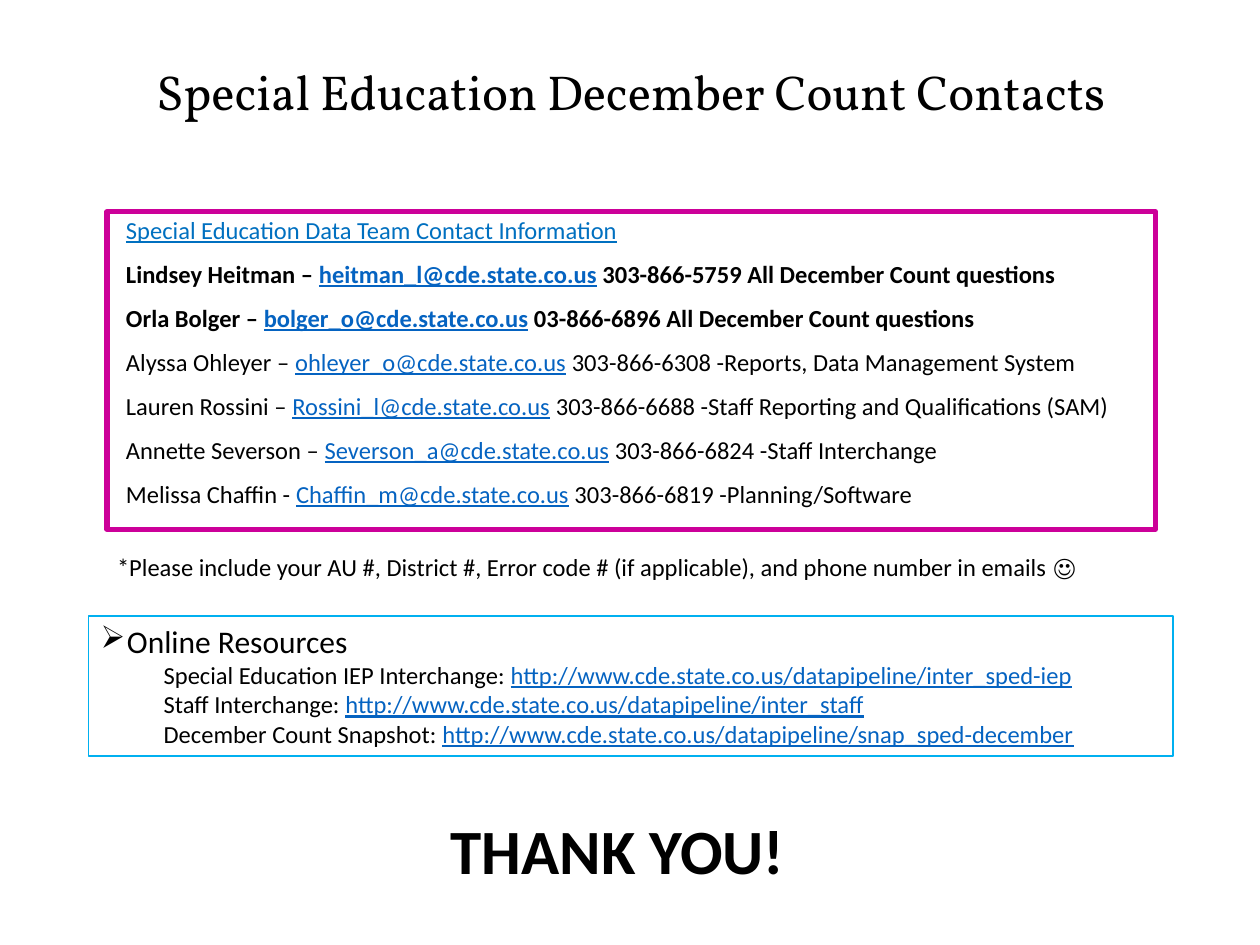
from pptx import Presentation
from pptx import util as u
from pptx.dml import color
from pptx.enum import shapes, text
from pptx.oxml import parse_xml
from pptx.oxml.ns import nsdecls

COLORS = {"ink": "000000", "link": "0563C1", "heading": "0070C0",
          "paper": "FFFFFF", "contact_border": "CC0099", "resource_border": "00B0F0"}
BODY_FONT = "Calibri"
SMALL_INDENT = 0.13

CONTACTS = [
    ("Lindsey Heitman –", "heitman_l@cde.state.co.us", "303-866-5759 All December Count questions", True),
    ("Orla Bolger –", "bolger_o@cde.state.co.us", "03-866-6896 All December Count questions", True),
    ("Alyssa Ohleyer –", "ohleyer_o@cde.state.co.us", "303-866-6308 -Reports, Data Management System", False),
    ("Lauren Rossini –", "Rossini_l@cde.state.co.us",
     "303-866-6688 -Staff Reporting and Qualifications (SAM)", False),
    ("Annette Severson –", "Severson_a@cde.state.co.us", "303-866-6824 -Staff Interchange", False),
    ("Melissa Chaffin -", "Chaffin_m@cde.state.co.us", "303-866-6819 -Planning/Software", False),
]
RESOURCES = [
    ("Special Education IEP Interchange:", "http://www.cde.state.co.us/datapipeline/inter_sped-iep"),
    ("Staff Interchange:", "http://www.cde.state.co.us/datapipeline/inter_staff"),
    ("December Count Snapshot:", "http://www.cde.state.co.us/datapipeline/snap_sped-december"),
]


def rgb(name):
    return color.RGBColor.from_string(COLORS[name])


def add_frame(slide, box, border=None, width=0.75, fill=None):
    """Add a wrapping text area, drawn as a rectangle when it has a border."""
    place = [u.Cm(length) for length in box]
    if border:
        area = slide.shapes.add_shape(shapes.MSO_SHAPE.RECTANGLE, *place)
        area.shadow.inherit = False
        area.line.color.rgb = rgb(border)
        area.line.width = u.Pt(width)
        if fill:
            area.fill.solid()
            area.fill.fore_color.rgb = rgb(fill)
        else:
            area.fill.background()
    else:
        area = slide.shapes.add_textbox(*place)
    frame = area.text_frame
    frame.word_wrap = True
    frame.vertical_anchor = text.MSO_ANCHOR.TOP
    return frame


def add_line(frame, parts, size, font=BODY_FONT, bold=False, align=text.PP_ALIGN.LEFT,
             indent=0, bullet=None):
    """Add a paragraph of (wording, colour name) parts; coloured parts are underlined."""
    first = frame.paragraphs[0]
    line = frame.add_paragraph() if first.runs else first
    properties = line._p.get_or_add_pPr()
    properties.set("marL", str(u.Cm(indent)))
    properties.set("indent", str(u.Cm(-indent if bullet else 0)))
    if bullet:
        properties.append(parse_xml(f'<a:buChar {nsdecls("a")} char="{bullet}"/>'))
    line.alignment = align
    line.font.name = font
    line.font.size = u.Pt(size)
    line.font.bold = bold
    for wording, tint in parts:
        run = line.add_run()
        run.text = wording
        run.font.color.rgb = rgb(tint)
        if tint != "ink":
            run.font.underline = True
    return line


def add_title(slide, box):
    frame = add_frame(slide, box)
    frame.vertical_anchor = text.MSO_ANCHOR.MIDDLE
    title = add_line(frame, [("Special Education December Count Contacts", "ink")], 28,
                     font="Vollkorn", align=text.PP_ALIGN.CENTER)
    title.line_spacing = 0.9


def add_contacts(slide, box):
    frame = add_frame(slide, box, "contact_border", 3, "paper")
    add_line(frame, [("Special Education Data Team Contact Information", "heading")], 14,
             indent=SMALL_INDENT).line_spacing = 0.9
    for person, email, details, bold in CONTACTS:
        parts = [(person + " ", "ink"), (email, "link"), (" " + details, "ink")]
        contact = add_line(frame, parts, 14, bold=bold, indent=SMALL_INDENT)
        contact.line_spacing = 0.9
        contact.space_before = u.Pt(10)


def add_note(slide, box):
    note = ("*Please include your AU #, District #, Error code # (if applicable), "
            "and phone number in emails ☺")
    add_line(add_frame(slide, box), [(note, "ink")], 14, indent=SMALL_INDENT)


def add_resources(slide, box):
    frame = add_frame(slide, box, "resource_border")
    add_line(frame, [("Online Resources", "ink")], 18, indent=0.53, bullet="➢")
    for label, address in RESOURCES:
        resource = add_line(frame, [(label + " ", "ink"), (address, "link")], 14, indent=1.27)
        resource.level = 1


def add_thanks(slide, box):
    add_line(add_frame(slide, box), [("THANK YOU!", "ink")], 36, bold=True,
             align=text.PP_ALIGN.CENTER)


def main():
    deck = Presentation()
    deck.slide_width, deck.slide_height = u.Cm(25.4), u.Cm(19.05)
    slide = deck.slides.add_slide(deck.slide_layouts[6])
    add_title(slide, (1.07, 0.81, 23.29, 2.18))
    add_note(slide, (1.98, 11, 21.67, 0.86))
    add_resources(slide, (1.78, 12.42, 21.87, 2.82))
    add_thanks(slide, (3.02, 16.23, 18.87, 1.8))
    add_contacts(slide, (2.16, 4.27, 21.13, 6.4))
    deck.save("out.pptx")


if __name__ == "__main__":
    main()
